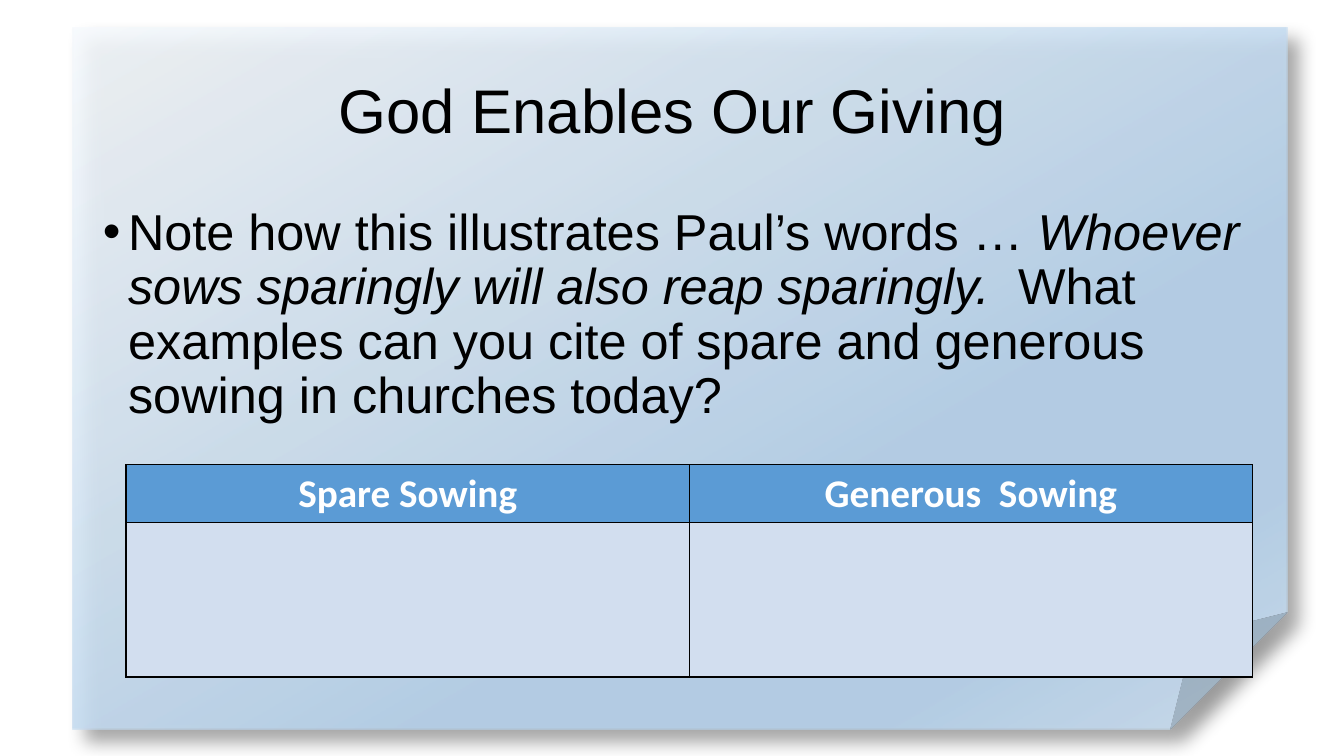
from typing import NamedTuple

from pptx import Presentation, util as u
from pptx.dml.color import RGBColor
from pptx.enum import shapes, text
from pptx.oxml import parse_xml
from pptx.oxml.ns import nsdecls

WIDTH, HEIGHT = u.Inches(13.33), u.Inches(7.5)
BLACK, WHITE, HEADER_BLUE, CELL_BLUE = "000000", "FFFFFF", "5B9BD5", "D2DEEF"


class Box(NamedTuple):
    """Left, top, width and height in percent of the slide."""
    left: float
    top: float
    width: float
    height: float

    def emu(self) -> tuple[int, ...]:
        sides = (WIDTH, HEIGHT, WIDTH, HEIGHT)
        return tuple(round(share * side / 100) for share, side in zip(self, sides))


class Stop(NamedTuple):
    position: int
    color: str


class Piece(NamedTuple):
    words: str
    italic: bool = False


class Row(NamedTuple):
    height: float
    fill: str
    labels: tuple[str, ...]


PAPER = Box(5.4, 3.6, 90.4, 92.93)
TITLE = Box(6.9, 5.33, 86.27, 19.33)
BODY = Box(6.9, 26.67, 86.27, 63.47)
TABLE = Box(9.38, 61.47, 83.8, 28)
PAPER_STOPS = (Stop(0, "F7FAFD"), Stop(64, "B5D2EC"), Stop(83, "B5D2EC"), Stop(100, "CEE1F2"))
QUESTION = (
    Piece("Note how this illustrates Paul’s words … "),
    Piece("Whoever sows sparingly will also reap sparingly.  ", italic=True),
    Piece("What examples can you cite of spare and generous sowing in churches today?"),
)
ROWS = (
    Row(0.57, HEADER_BLUE, ("Spare Sowing", "Generous  Sowing")),
    Row(1.53, CELL_BLUE, ("", "")),
)


def rgb(color: str) -> RGBColor:
    return RGBColor.from_string(color)


def style(font, name: str, size: int, color: str) -> None:
    font.name, font.size = name, u.Pt(size)
    font.color.rgb = rgb(color)


def place(sp, box: Box) -> None:
    sp.left, sp.top, sp.width, sp.height = box.emu()


def draw_paper(s) -> None:
    """Folded sheet behind the text, with a translucent gradient and a soft shadow."""
    sp = s.shapes.add_shape(shapes.MSO_SHAPE.FOLDED_CORNER, *PAPER.emu())
    sp.line.fill.background()
    stops = "".join(
        f'<a:gs pos="{stop.position * 1000}"><a:srgbClr val="{stop.color}">'
        '<a:alpha val="87000"/></a:srgbClr></a:gs>' for stop in PAPER_STOPS)
    sp.element.spPr.find("{*}prstGeom").addnext(parse_xml(
        f'<a:gradFill {nsdecls("a")} rotWithShape="1"><a:gsLst>{stops}</a:gsLst>'
        '<a:lin ang="3600000" scaled="0"/></a:gradFill>'))
    sp.element.spPr.append(parse_xml(
        f'<a:effectLst {nsdecls("a")}><a:outerShdw blurRad="{u.Pt(13)}" dist="{u.Pt(13)}" '
        f'dir="2700000" algn="tl" rotWithShape="0"><a:srgbClr val="{BLACK}">'
        '<a:alpha val="40000"/></a:srgbClr></a:outerShdw></a:effectLst>'))
    s.shapes.title.element.addprevious(sp.element)


def write_title(s) -> None:
    sp = s.shapes.title
    place(sp, TITLE)
    tf = sp.text_frame
    tf.text = "God Enables Our Giving"
    tf.auto_size = text.MSO_AUTO_SIZE.NONE
    tf.vertical_anchor = text.MSO_ANCHOR.MIDDLE
    p = tf.paragraphs[0]
    p.alignment, p.line_spacing = text.PP_ALIGN.CENTER, 0.9
    style(p.runs[0].font, "Arial", 44, BLACK)


def write_question(s) -> None:
    sp = s.placeholders[1]
    place(sp, BODY)
    tf = sp.text_frame
    tf.auto_size = text.MSO_AUTO_SIZE.NONE
    p = tf.paragraphs[0]
    pPr = p._p.get_or_add_pPr()
    pPr.set("marL", str(u.Inches(0.25)))
    pPr.set("indent", str(-u.Inches(0.25)))
    pPr.append(parse_xml(f'<a:buFont {nsdecls("a")} typeface="Arial"/>'))
    pPr.append(parse_xml(f'<a:buChar {nsdecls("a")} char="•"/>'))
    p.line_spacing, p.space_before = 0.9, u.Pt(0)
    for piece in QUESTION:
        r = p.add_run()
        r.text = piece.words
        style(r.font, "Arial", 36, BLACK)
        r.font.italic = piece.italic


def format_cell(cell, label: str, fill: str) -> None:
    tcPr = cell._tc.get_or_add_tcPr()
    for side in "LRTB":
        tcPr.append(parse_xml(
            f'<a:ln{side} {nsdecls("a")} w="{u.Pt(1)}"><a:solidFill>'
            f'<a:srgbClr val="{BLACK}"/></a:solidFill></a:ln{side}>'))
    cell.fill.solid()
    cell.fill.fore_color.rgb = rgb(fill)
    if label:
        cell.text = label
        p = cell.text_frame.paragraphs[0]
        p.alignment = text.PP_ALIGN.CENTER
        style(p.runs[0].font, "Calibri", 28, WHITE)
        p.runs[0].font.bold = True


def draw_table(s) -> None:
    table = s.shapes.add_table(len(ROWS), len(ROWS[0].labels), *TABLE.emu()).table
    for i, row in enumerate(ROWS):
        table.rows[i].height = u.Inches(row.height)
        for j, label in enumerate(row.labels):
            format_cell(table.cell(i, j), label, row.fill)


def main() -> None:
    prs = Presentation()
    prs.slide_width, prs.slide_height = WIDTH, HEIGHT
    s = prs.slides.add_slide(prs.slide_layouts[1])
    draw_paper(s)
    write_title(s)
    write_question(s)
    draw_table(s)
    prs.save("out.pptx")


if __name__ == "__main__":
    main()
